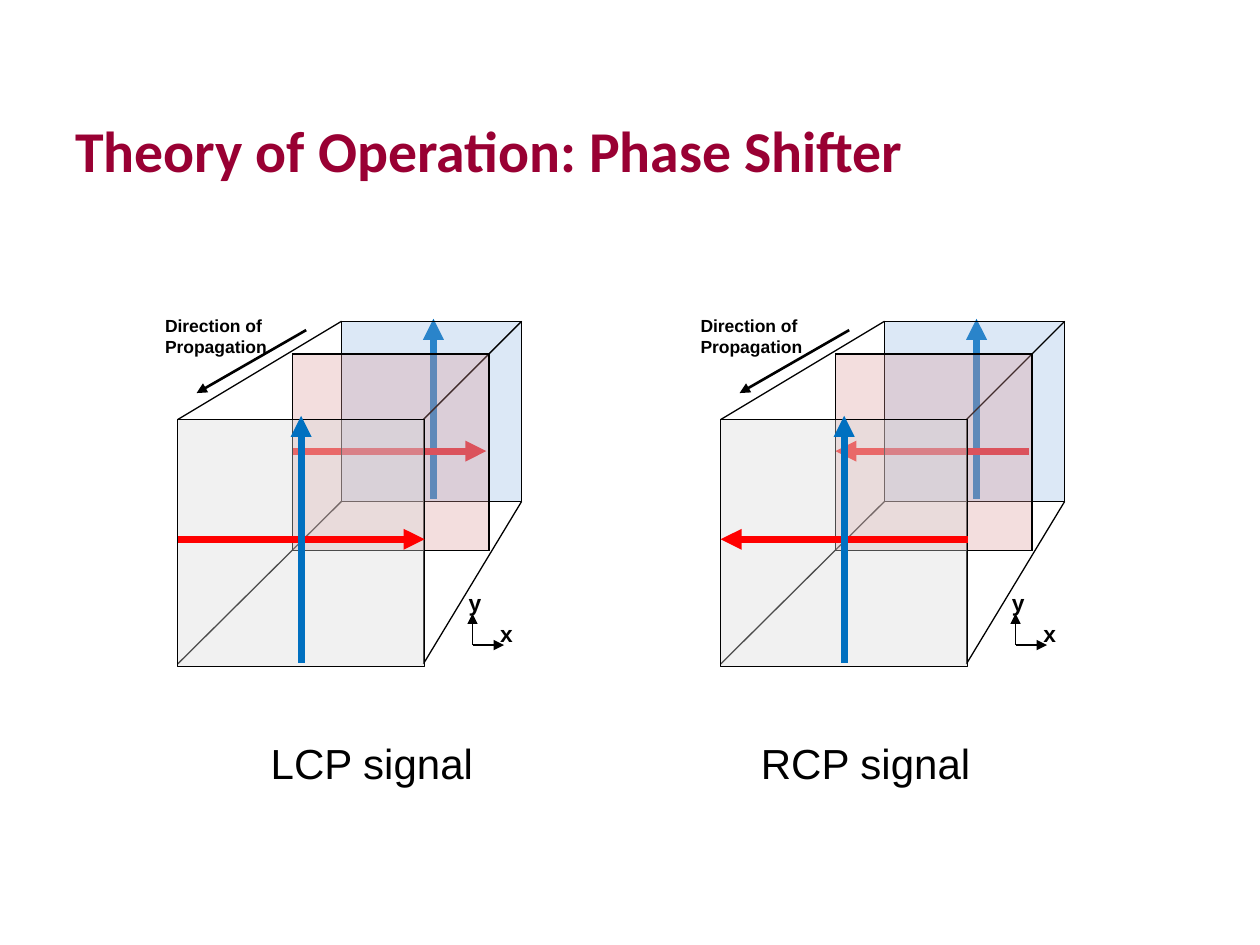
"""Build the phase shifter slide comparing LCP and RCP signals."""
from dataclasses import dataclass

from lxml import etree
from pptx import Presentation
from pptx.dml.color import RGBColor
from pptx.enum import shapes, text
from pptx.oxml import ns
from pptx.util import Inches, Pt


@dataclass(frozen=True)
class Theme:
    """Colours, fonts, type sizes and line widths."""
    title: str = "990033"
    ink: str = "000000"
    vertical: str = "0070C0"
    horizontal: str = "FF0000"
    back: str = "8DB3E2"
    middle: str = "D99594"
    front: str = "D8D8D8"
    title_font: str = "Calibri"
    body_font: str = "Arial"
    title_size: float = 33
    caption_size: float = 24
    axis_size: float = 13
    label_size: float = 10
    thin: float = 0.75
    medium: float = 1.5
    thick: float = 4


THEME = Theme()
FIGURE_SHIFT = 4.31

CUBE_EDGES = (
    ((1.41, 3.33), (2.71, 2.55)),
    ((2.71, 3.98), (1.41, 5.27)),
    ((3.36, 3.33), (4.14, 2.55)),
    ((4.14, 2.55), (4.14, 3.98)),
    ((4.14, 3.98), (3.36, 5.27)),
    ((3.36, 5.27), (3.36, 3.33)),
)
MIDDLE_EDGES = (
    ((2.32, 2.81), (3.88, 2.81)),
    ((2.32, 4.37), (3.88, 4.37)),
    ((3.88, 2.81), (3.88, 4.37)),
    ((2.32, 2.81), (2.32, 4.37)),
)


def add_text(container, box, lines, size, font=THEME.body_font, color=THEME.ink,
             bold=True, inset=(0.1, 0.05), wrap=True, anchor=text.MSO_ANCHOR.TOP):
    """Add a text box with one paragraph per line."""
    shape = container.add_textbox(*map(Inches, box))
    frame = shape.text_frame
    frame.word_wrap = wrap
    frame.vertical_anchor = anchor
    frame.margin_left = frame.margin_right = Inches(inset[0])
    frame.margin_top = frame.margin_bottom = Inches(inset[1])
    frame.text = "\n".join(lines)
    for paragraph in frame.paragraphs:
        paragraph.font.name = font
        paragraph.font.size = Pt(size)
        paragraph.font.bold = bold
        paragraph.font.color.rgb = RGBColor.from_string(color)
    return shape


def add_line(container, start, end, shift, color=THEME.ink, width=THEME.thin, arrow=None):
    """Add a straight line, with an arrowhead at headEnd or tailEnd if named."""
    line = container.add_connector(
        shapes.MSO_CONNECTOR.STRAIGHT,
        Inches(start[0] + shift), Inches(start[1]),
        Inches(end[0] + shift), Inches(end[1]))
    line.line.color.rgb = RGBColor.from_string(color)
    line.line.width = Pt(width)
    if arrow:
        outline = line.line._get_or_add_ln()
        etree.SubElement(outline, ns.qn(f"a:{arrow}"), type="triangle")
    etree.SubElement(line._element.spPr, ns.qn("a:effectLst"))


def add_plane(container, left, top, side, shift, color, opacity):
    """Add a translucent square plane."""
    plane = container.add_shape(
        shapes.MSO_SHAPE.RECTANGLE, Inches(left + shift), Inches(top),
        Inches(side), Inches(side))
    plane.shadow.inherit = False
    plane.fill.solid()
    plane.fill.fore_color.rgb = RGBColor.from_string(color)
    swatch = plane._element.spPr.find(f".//{ns.qn('a:srgbClr')}")
    etree.SubElement(swatch, ns.qn("a:alpha"), val=str(opacity * 1000))
    plane.line.color.rgb = RGBColor.from_string(THEME.ink)
    plane.line.width = Pt(THEME.thin)


def add_edges(container, edges, shift):
    """Add thin lines for a list of edges."""
    for start, end in edges:
        add_line(container, start, end, shift)


def add_axes(container, shift):
    """Add the small x and y axes with their letters."""
    origin = (3.75, 5.12)
    inset = (0.09, 0.05)
    add_text(container, (3.63 + shift, 4.62, 0.35, 0.35), ["y"], THEME.axis_size, inset=inset)
    for tip in ((3.75, 4.87), (4, 5.12)):
        add_line(container, origin, tip, shift, arrow="tailEnd")
    add_text(container, (3.88 + shift, 4.87, 0.25, 0.35), ["x"], THEME.axis_size, inset=inset)


def add_figure(slide, shift, label_left, horizontal_arrow):
    """Add one grouped wave figure, from the back plane to the front."""
    group = slide.shapes.add_group_shape().shapes
    vertical = dict(color=THEME.vertical, width=THEME.thick, arrow="tailEnd")
    horizontal = dict(color=THEME.horizontal, width=THEME.thick, arrow=horizontal_arrow)
    add_line(group, (3.44, 3.96), (3.44, 2.53), shift, **vertical)
    add_line(group, (2.32, 3.58), (3.86, 3.58), shift, **horizontal)
    add_plane(group, 2.71, 2.55, 1.43, shift, THEME.back, 30)
    add_edges(group, CUBE_EDGES, shift)
    add_edges(group, MIDDLE_EDGES, shift)
    add_plane(group, 2.32, 2.81, 1.56, shift, THEME.middle, 30)
    add_plane(group, 1.41, 3.33, 1.96, shift, THEME.front, 35)
    add_line(group, (1.41, 4.28), (3.37, 4.28), shift, **horizontal)
    add_line(group, (2.39, 5.26), (2.39, 3.3), shift, **vertical)
    add_axes(group, shift)
    add_line(group, (2.43, 2.62), (1.56, 3.12), shift, width=THEME.medium, arrow="tailEnd")
    add_text(group, (label_left, 2.5, 0.95, 0.41), ["Direction of", "Propagation"],
             THEME.label_size, inset=(0, 0))


def add_caption(slide, left, width, wording):
    """Add the caption below a figure."""
    caption = add_text(slide.shapes, (left, 5.8, width, 0.51), [wording],
                       THEME.caption_size, bold=False, wrap=False)
    caption.text_frame.auto_size = text.MSO_AUTO_SIZE.SHAPE_TO_FIT_TEXT


def main():
    """Build and save the slide."""
    presentation = Presentation()
    presentation.slide_width = Inches(10)
    presentation.slide_height = Inches(7.5)
    slide = presentation.slides.add_slide(presentation.slide_layouts[6])
    add_text(slide.shapes, (0.5, 0.56, 9, 1.25), ["Theory of Operation: Phase Shifter"],
             THEME.title_size, font=THEME.title_font, color=THEME.title,
             anchor=text.MSO_ANCHOR.MIDDLE)
    add_figure(slide, 0, 1.31, "tailEnd")
    add_figure(slide, FIGURE_SHIFT, 5.56, "headEnd")
    add_caption(slide, 2.05, 1.92, "LCP signal")
    add_caption(slide, 5.94, 1.88, "RCP signal")
    presentation.save("out.pptx")


if __name__ == "__main__":
    main()
